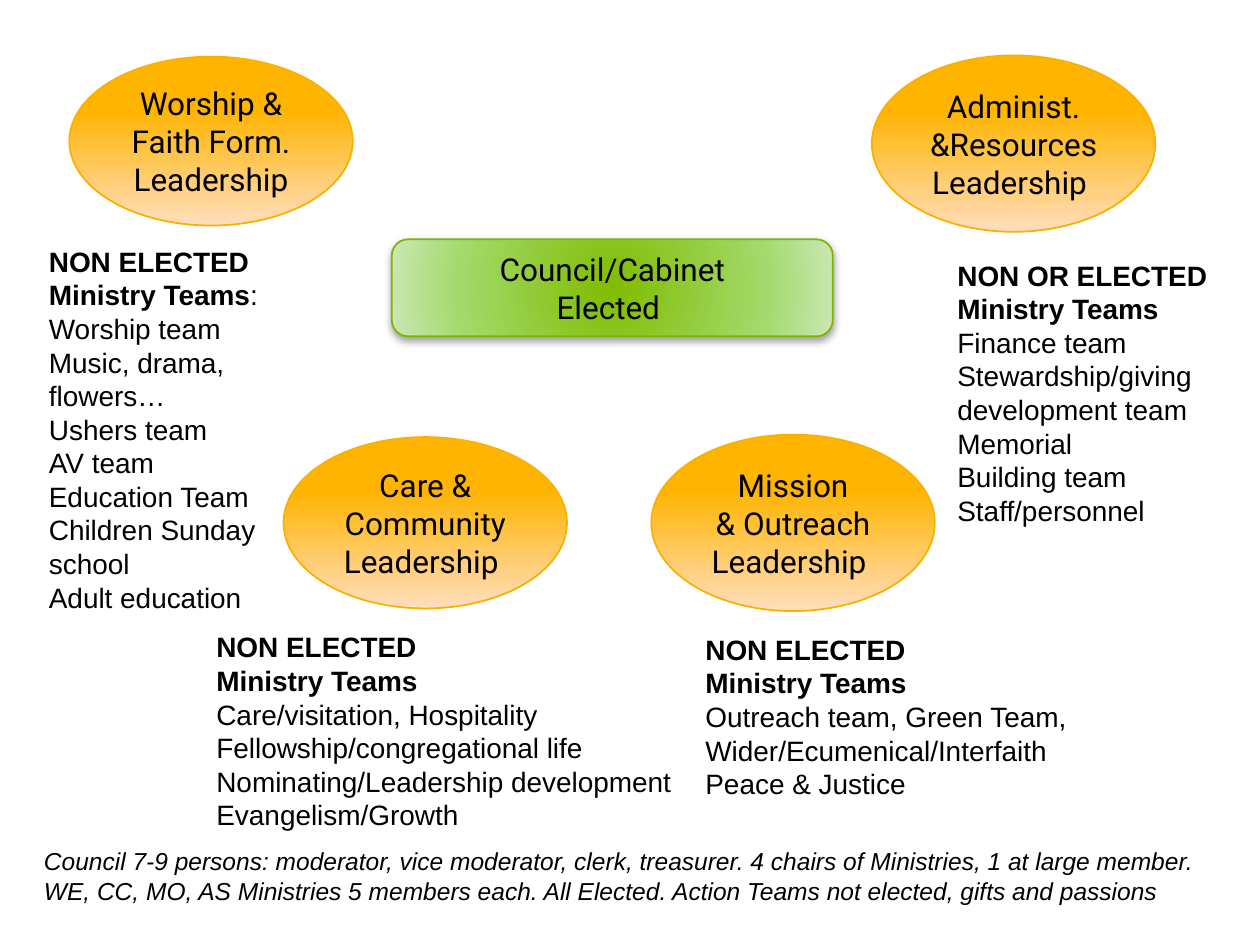
from pptx import Presentation
from pptx.dml.color import RGBColor as Rgb
from pptx.enum.shapes import MSO_SHAPE as Preset
from pptx.enum.text import MSO_ANCHOR as Anchor, MSO_AUTO_SIZE as AutoSize, PP_ALIGN as Align
from pptx.oxml import parse_xml
from pptx.oxml.ns import nsdecls, qn
from pptx.util import Pt

COLORS = {
    "text": "000000", "shadow": "000000",
    "orange": "FFB400", "peach": "FFDEBD", "orange_line": "F9B000",
    "green": "80BC00", "light_green": "A3DA6D", "pale_green": "CBE7B4", "green_line": "7DB602",
}
SHAPE_FONT = {"name": "Roboto", "size": Pt(18)}
LIST_FONT = {"name": "Arial", "size": Pt(16)}
NOTE_FONT = {"name": "Arial", "size": Pt(14), "italic": True}

LEADERSHIPS = [
    ((39.6, 32.4, 162, 96.5), ["Worship &", "Faith Form.", "Leadership"]),
    ((162, 249.8, 162, 97.9), ["Care & Community", "Leadership "]),
    ((372.2, 248.4, 162, 100.8), ["Mission", "& Outreach", "Leadership "]),
    ((498.2, 31.7, 162, 100.8), ["Administ. &Resources", "Leadership "]),
]
TEAM_LISTS = [
    ((20.9, 136.1, 151.2, 220.3), [
        ("NON ELECTED", ""), ("Ministry Teams", ":"), "Worship team", "Music, drama, flowers…",
        "Ushers team", "AV team", "Education Team", "Children Sunday school", "Adult education"]),
    ((116.6, 356.4, 285.1, 123.8), [
        ("NON ELECTED", ""), ("Ministry Teams", ""), "Care/visitation, Hospitality",
        "Fellowship/congregational life", "Nominating/Leadership development", "Evangelism/Growth"]),
    ((540, 144, 162, 162.7), [
        ("NON OR ELECTED", ""), ("Ministry Teams ", "Finance team"),
        "Stewardship/giving development team", "Memorial", "Building team", "Staff/personnel"]),
    ((396, 357.8, 258.5, 104.4), [
        ("NON ELECTED", ""), ("Ministry Teams", ""), "Outreach team, Green Team,",
        "Wider/Ecumenical/Interfaith", "Peace & Justice"]),
]
NOTE = [
    "Council 7-9 persons: moderator, vice moderator, clerk, treasurer. "
    "4 chairs of Ministries, 1 at large member.",
    "WE, CC, MO, AS Ministries 5 members each. All Elected. "
    "Action Teams not elected, gifts and passions",
]


def color(name):
    """Return the named colour."""
    return Rgb.from_string(COLORS[name])


def add_run(paragraph, text, font_format):
    """Append a run with the given font values."""
    run = paragraph.add_run()
    run.text = text
    for name, value in font_format.items():
        setattr(run.font, name, value)
    run.font.color.rgb = color("text")


def write_lines(text_frame, lines, font_format, alignment):
    """Write one paragraph per line; a pair is a bold part and a plain part."""
    for index, line in enumerate(lines):
        paragraph = text_frame.add_paragraph() if index else text_frame.paragraphs[0]
        paragraph.alignment = alignment
        bold, plain = line if isinstance(line, tuple) else ("", line)
        if bold:
            add_run(paragraph, bold, {**font_format, "bold": True})
        if plain:
            add_run(paragraph, plain, font_format)


def add_label_shape(slide, preset, box, lines, line_color):
    """Add an outlined shape with centred text and no shadow."""
    shape = slide.shapes.add_shape(preset, *map(Pt, box))
    shape.shadow.inherit = False
    shape.line.color.rgb = color(line_color)
    shape.line.width = Pt(1)
    shape.text_frame.vertical_anchor = Anchor.MIDDLE
    write_lines(shape.text_frame, lines, SHAPE_FONT, Align.CENTER)
    return shape


def add_leadership(slide, box, lines):
    """Add an ellipse that fades downwards from orange to peach."""
    shape = add_label_shape(slide, Preset.OVAL, box, lines, "orange_line")
    shape.fill.gradient()
    shape.fill.gradient_angle = 270
    for stop, position, name in zip(shape.fill.gradient_stops, (0.31, 1), ("orange", "peach")):
        stop.position = position
        stop.color.rgb = color(name)


def add_council(slide):
    """Add the green council box with its radial fill and soft shadow."""
    shape = add_label_shape(slide, Preset.ROUNDED_RECTANGLE, (223.9, 136.8, 252, 55.4),
                            ["Council/Cabinet", "Elected "], "green_line")
    shape.fill.gradient()
    properties = shape.element.spPr
    stops = "".join(
        f'<a:gs pos="{position * 1000}"><a:srgbClr val="{COLORS[name]}"/></a:gs>'
        for position, name in ((0, "green"), (69, "light_green"), (100, "pale_green")))
    properties.replace(properties.find(qn("a:gradFill")), parse_xml(
        f'<a:gradFill {nsdecls("a")} rotWithShape="1"><a:gsLst>{stops}</a:gsLst><a:path path="circle">'
        '<a:fillToRect l="50000" t="50000" r="50000" b="50000"/></a:path></a:gradFill>'))
    properties.find(qn("a:effectLst")).append(parse_xml(
        f'<a:outerShdw {nsdecls("a")} blurRad="{Pt(5)}" dist="{Pt(2)}" dir="5400000" rotWithShape="0">'
        f'<a:srgbClr val="{COLORS["shadow"]}"><a:alpha val="40000"/></a:srgbClr></a:outerShdw>'))


def add_text(slide, box, lines, font_format):
    """Add a wrapping, left-aligned text box."""
    text_frame = slide.shapes.add_textbox(*map(Pt, box)).text_frame
    text_frame.word_wrap = True
    text_frame.auto_size = AutoSize.SHAPE_TO_FIT_TEXT
    write_lines(text_frame, lines, font_format, Align.LEFT)


def main():
    """Build and save the organisation slide."""
    presentation = Presentation()
    presentation.slide_width, presentation.slide_height = Pt(720), Pt(540)
    slide = presentation.slides.add_slide(presentation.slide_layouts[6])
    for box, lines in LEADERSHIPS:
        add_leadership(slide, box, lines)
    add_council(slide)
    for box, lines in TEAM_LISTS:
        add_text(slide, box, lines, LIST_FONT)
    add_text(slide, (18, 480.2, 689.8, 41), NOTE, NOTE_FONT)
    presentation.save("out.pptx")


if __name__ == "__main__":
    main()
